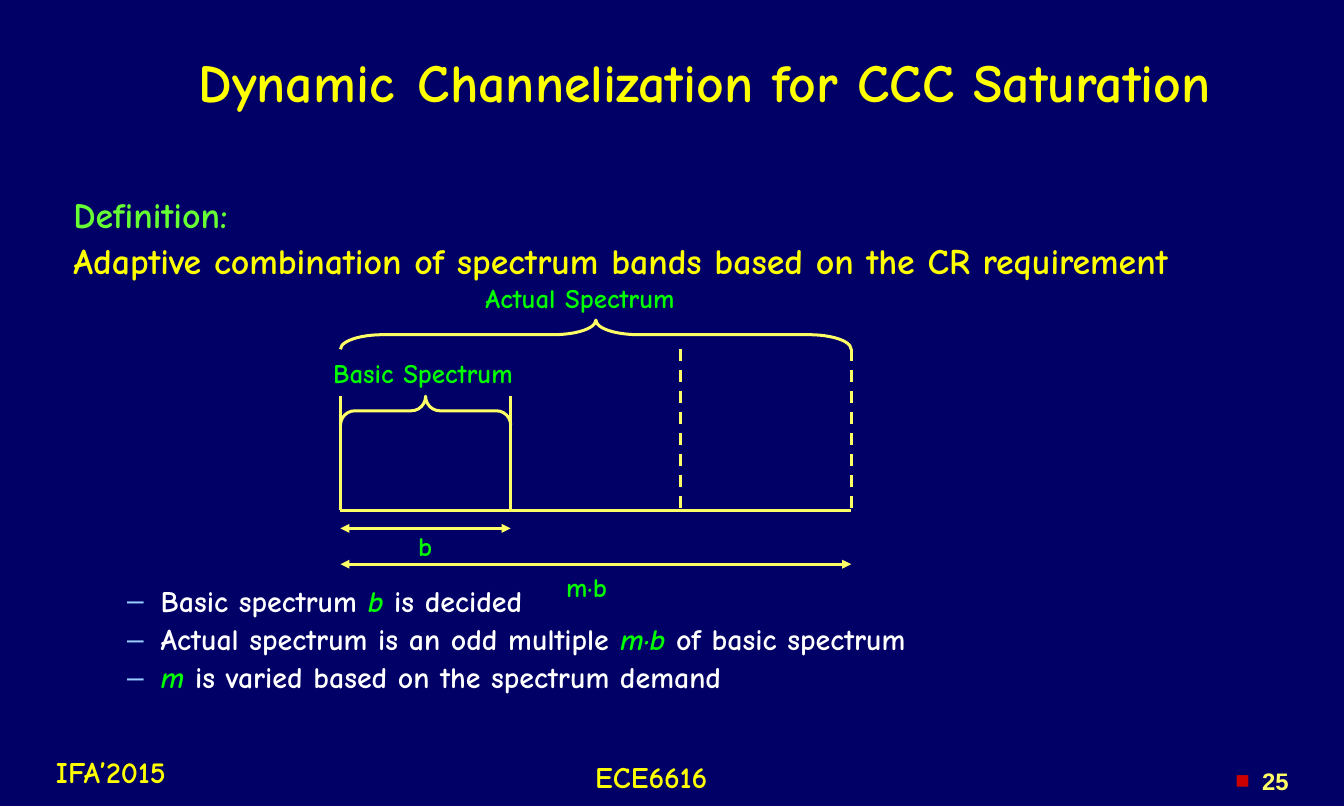
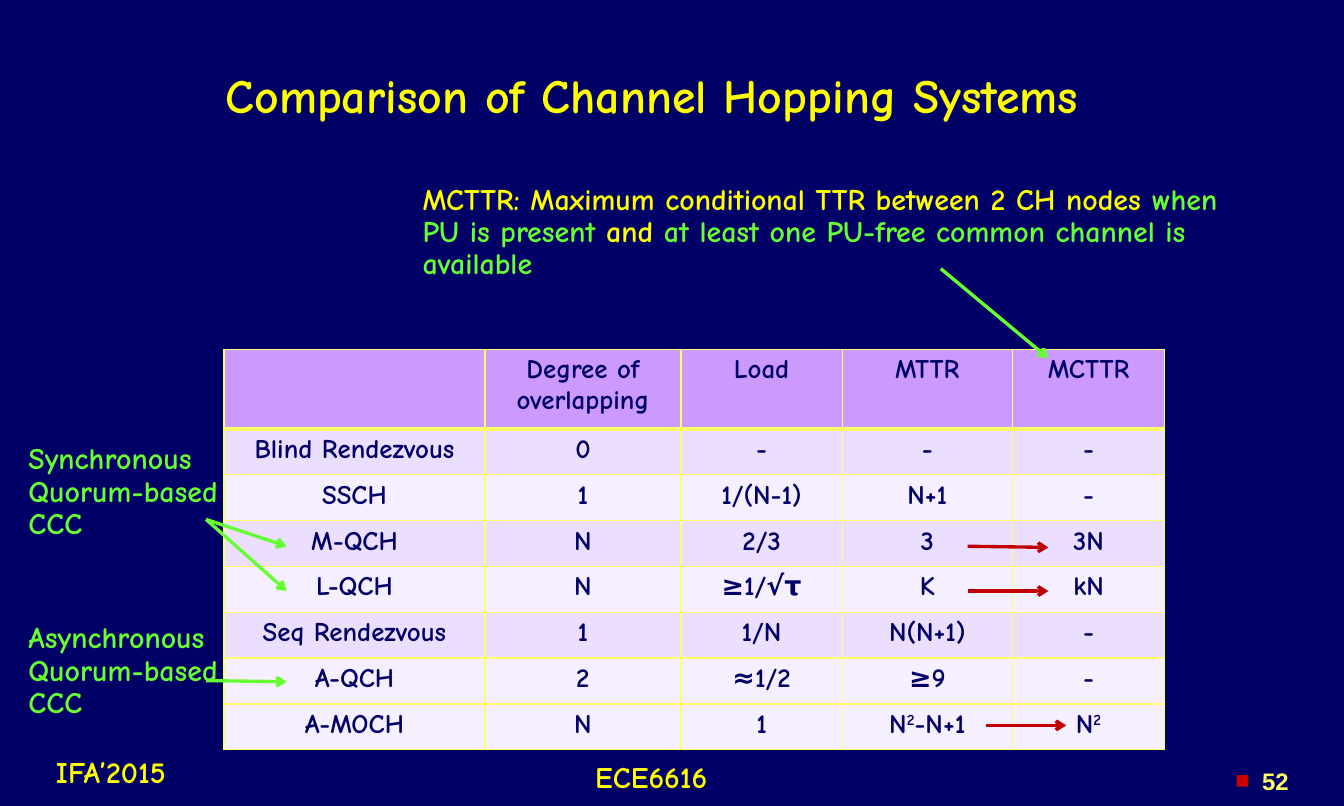
from lxml.etree import SubElement
from pptx import Presentation
from pptx.dml.color import RGBColor
from pptx.enum.dml import MSO_LINE
from pptx.enum.shapes import MSO_CONNECTOR, MSO_SHAPE
from pptx.enum.text import MSO_ANCHOR, PP_ALIGN
from pptx.oxml.ns import qn
from pptx.util import Pt

PX = 9525  # 96 px to the inch
FONT = "Comic Neue"
NAVY = RGBColor(0x00, 0x00, 0x66)
YELLOW = RGBColor(0xFF, 0xFF, 0x00)
PALE_YELLOW = RGBColor(0xFF, 0xFF, 0x66)
LIME = RGBColor(0x66, 0xFF, 0x33)
GREEN = RGBColor(0x00, 0xFF, 0x00)
WHITE = RGBColor(0xFF, 0xFF, 0xFF)
SKY = RGBColor(0x99, 0xCC, 0xFF)
RED = RGBColor(0xCC, 0x00, 0x00)
DARK_RED = RGBColor(0xC0, 0x00, 0x00)
PURPLE = RGBColor(0xCC, 0x99, 0xFF)
LILAC = RGBColor(0xEC, 0xDE, 0xFF)
PALE_LILAC = RGBColor(0xF6, 0xEF, 0xFF)

# Content: a paragraph is a list of runs, each (text, changes to the font)
VARIABLE = {"color": GREEN, "italic": True}
LIMIT = {"color": LIME}
SQUARED = ("2", {"baseline": 30000})

FOOTERS = [("IFA’2015", (28, 672, 142, 39)), ("ECE6616", (514, 677, 135, 39))]

SATURATION_TITLE = [("Dynamic", {}), (" ", {"size": 44}), ("Channelization for CCC Saturation", {})]
DEFINITION = [
    [("Definition:", {"color": LIME})],
    [("Adaptive combination of spectrum bands based on the CR requirement", {})],
]
RULES = [
    [("Basic spectrum ", {}), ("b", VARIABLE), (" is decided", {})],
    [("Actual spectrum is an odd multiple ", {}), ("m·b", VARIABLE), (" of basic spectrum", {})],
    [("m", VARIABLE), (" is varied based on the spectrum demand", {})],
]
SPECTRUM_LABELS = [
    ("b", (364, 472, 40, 36)),
    ("m·b", (496, 508, 72, 36)),
    ("Actual Spectrum", (424, 250, 224, 36)),
    ("Basic Spectrum", (288, 317, 224, 36)),
]

COMPARISON_TITLE = [("Comparison of Channel Hopping Systems", {})]
MCTTR_MEANING = [
    ("MCTTR: Maximum conditional TTR between 2 CH nodes ", {}),
    ("when PU is present ", LIMIT),
    ("and ", {}),
    ("at least one PU-free common channel is available", LIMIT),
]
SYSTEMS = [
    ["", "Degree of overlapping", "Load", "MTTR", "MCTTR"],
    ["Blind Rendezvous", "0", "-", "-", "-"],
    ["SSCH", "1", "1/(N-1)", "N+1", "-"],
    ["M-QCH", "N", "2/3", "3", "3N"],
    ["L-QCH", "N", "≥1/√τ", "K", "kN"],
    ["Seq Rendezvous", "1", "1/N", "N(N+1)", "-"],
    ["A-QCH", "2", "≈1/2", "≥9", "-"],
    ["A-MOCH", "N", "1", [("N", {}), SQUARED, ("-N+1", {})], [("N", {}), SQUARED]],
]
COLUMN_WIDTHS = [233, 175, 144, 152, 136]
HEADER_HEIGHT, ROW_HEIGHT = 71, 41
QUORUM_NOTES = [("Synchronous Quorum-based CCC", 392), ("Asynchronous Quorum-based CCC", 552)]
POINTERS = [
    (LIME, (184, 464), (256, 488)),
    (LIME, (184, 464), (256, 528)),
    (LIME, (184, 608), (256, 609)),
    (LIME, (840, 240), (936, 320)),
    (DARK_RED, (864, 488), (936, 489)),
    (DARK_RED, (864, 528), (936, 528)),
    (DARK_RED, (880, 648), (952, 648)),
]


# Text
def write_runs(paragraph, runs, size, color, font=FONT):
    for text, changes in runs:
        run = paragraph.add_run()
        run.text = text
        run.font.name = font
        run.font.bold = True
        run.font.size = Pt(changes.get("size", size))
        run.font.color.rgb = changes.get("color", color)
        if changes.get("italic"):
            run.font.italic = True
        if "baseline" in changes:
            run.font._element.set("baseline", str(changes["baseline"]))


def add_bullet(paragraph, mark, color, margin, hanging):
    properties = paragraph._p.get_or_add_pPr()
    properties.set("marL", str(margin * PX))
    properties.set("indent", str(-hanging * PX))
    tint = SubElement(properties, qn("a:buClr"))
    SubElement(tint, qn("a:srgbClr")).set("val", str(color))
    SubElement(properties, qn("a:buFont")).set("typeface", "Arial")
    SubElement(properties, qn("a:buChar")).set("char", mark)


def add_text(slide, box, paragraphs, size, color, align=PP_ALIGN.LEFT, font=FONT,
             spacing=0.9, anchor=MSO_ANCHOR.TOP, bullet=None):
    frame = slide.shapes.add_textbox(*(side * PX for side in box)).text_frame
    frame.word_wrap = True
    frame.vertical_anchor = anchor
    for index, runs in enumerate(paragraphs):
        paragraph = frame.add_paragraph() if index else frame.paragraphs[0]
        paragraph.alignment = align
        paragraph.line_spacing = spacing
        if index:
            paragraph.space_before = Pt(size * 0.2)
        if bullet:
            add_bullet(paragraph, *bullet)
        write_runs(paragraph, runs, size, color, font)


# Lines and braces
def add_line(slide, start, end, color=PALE_YELLOW, width=2, dashed=False, head=None, tail=None):
    line = slide.shapes.add_connector(
        MSO_CONNECTOR.STRAIGHT, *(place * PX for place in (*start, *end)))
    line.line.color.rgb = color
    line.line.width = Pt(width)
    if dashed:
        line.line.dash_style = MSO_LINE.DASH
    outline = line.line._get_or_add_ln()
    for tag, kind in (("a:headEnd", head), ("a:tailEnd", tail)):
        if kind:
            SubElement(outline, qn(tag)).set("type", kind)
    SubElement(line._element.spPr, qn("a:effectLst"))


def add_top_brace(slide, left, right, top, height, curve):
    width = right - left
    brace = slide.shapes.add_shape(
        MSO_SHAPE.LEFT_BRACE, (left + (width - height) // 2) * PX,
        (top - (width - height) // 2) * PX, height * PX, width * PX)
    brace.rotation = 90
    brace.adjustments[0] = curve
    brace.shadow.inherit = False
    brace.fill.background()
    brace.line.color.rgb = PALE_YELLOW
    brace.line.width = Pt(2)


# Table
def set_borders(cell, widths):
    properties = cell._tc.get_or_add_tcPr()
    for index, (side, width) in enumerate(zip("LRTB", widths)):
        border = properties.makeelement(qn("a:ln" + side), {"w": str(Pt(width))})
        fill = SubElement(border, qn("a:solidFill"))
        SubElement(fill, qn("a:srgbClr")).set("val", str(PALE_YELLOW))
        properties.insert(index, border)


def add_systems_table(slide, left, top):
    last = len(SYSTEMS) - 1
    table = slide.shapes.add_table(
        len(SYSTEMS), len(COLUMN_WIDTHS), left * PX, top * PX,
        sum(COLUMN_WIDTHS) * PX, (HEADER_HEIGHT + last * ROW_HEIGHT) * PX).table
    for column, width in zip(table.columns, COLUMN_WIDTHS):
        column.width = width * PX
    for r, values in enumerate(SYSTEMS):
        table.rows[r].height = (ROW_HEIGHT if r else HEADER_HEIGHT) * PX
        band = LILAC if r % 2 and r < last else PALE_LILAC
        for c, value in enumerate(values):
            cell = table.cell(r, c)
            cell.fill.solid()
            cell.fill.fore_color.rgb = band if r else PURPLE
            set_borders(cell, (1, 1, 3 if r == 1 else 1, 1 if r else 3))
            paragraph = cell.text_frame.paragraphs[0]
            paragraph.alignment = PP_ALIGN.CENTER
            if value:
                runs = [(value, {})] if isinstance(value, str) else value
                write_runs(paragraph, runs, 18, NAVY)


# Slides
def add_slide(prs, title, title_place, title_size, number):
    slide = prs.slides.add_slide(prs.slide_layouts[6])
    slide.background.fill.solid()
    slide.background.fill.fore_color.rgb = NAVY
    for text, box in FOOTERS:
        add_text(slide, box, [[(text, {})]], 20, YELLOW, PP_ALIGN.CENTER)
    add_text(slide, (*title_place, 947, 88), [title], title_size, YELLOW,
             spacing=1.0, anchor=MSO_ANCHOR.MIDDLE)
    add_text(slide, (1080, 680, 80, 32), [[(number, {})]], 16, PALE_YELLOW, PP_ALIGN.RIGHT,
             "Arial", 1.0, bullet=("■", RED, 24, 24))
    return slide


def add_saturation_slide(prs):
    slide = add_slide(prs, SATURATION_TITLE, (168, 24), 36, "25")
    add_text(slide, (56, 172, 1120, 84), DEFINITION, 24, YELLOW)
    add_text(slide, (56, 519, 1120, 116), RULES, 20, WHITE, bullet=("–", SKY, 78, 30))

    # Spectrum diagram: three equal bands above one base line
    edges = [304 + 152 * band for band in range(4)]
    left, basic, middle, right = edges
    base = 456
    add_line(slide, (left, base), (right, base))
    add_top_brace(slide, left, right, 286, 26, 1.46)
    add_top_brace(slide, left, basic, 354, 26, 0.49)
    for x in (left, basic):
        add_line(slide, (x, 354), (x, base))
    for x in (middle, right):
        add_line(slide, (x, 312), (x, base), dashed=True)
    for end, y in ((basic, 472), (right, 504)):
        add_line(slide, (left, y), (end, y), head="triangle", tail="triangle")
    for text, box in SPECTRUM_LABELS:
        add_text(slide, box, [[(text, {})]], 18, GREEN)


def add_comparison_slide(prs):
    slide = add_slide(prs, COMPARISON_TITLE, (192, 40), 32, "52")
    add_systems_table(slide, 200, 312)
    for text, top in QUORUM_NOTES:
        add_text(slide, (16, top, 192, 97), [[(text, {})]], 20, LIME)
    add_text(slide, (368, 160, 760, 97), [MCTTR_MEANING], 20, YELLOW)
    for color, start, end in POINTERS:
        add_line(slide, start, end, color, 2.25, tail="arrow")


def main():
    prs = Presentation()
    prs.slide_width, prs.slide_height = 1200 * PX, 720 * PX
    add_saturation_slide(prs)
    add_comparison_slide(prs)
    prs.save("out.pptx")


if __name__ == "__main__":
    main()
